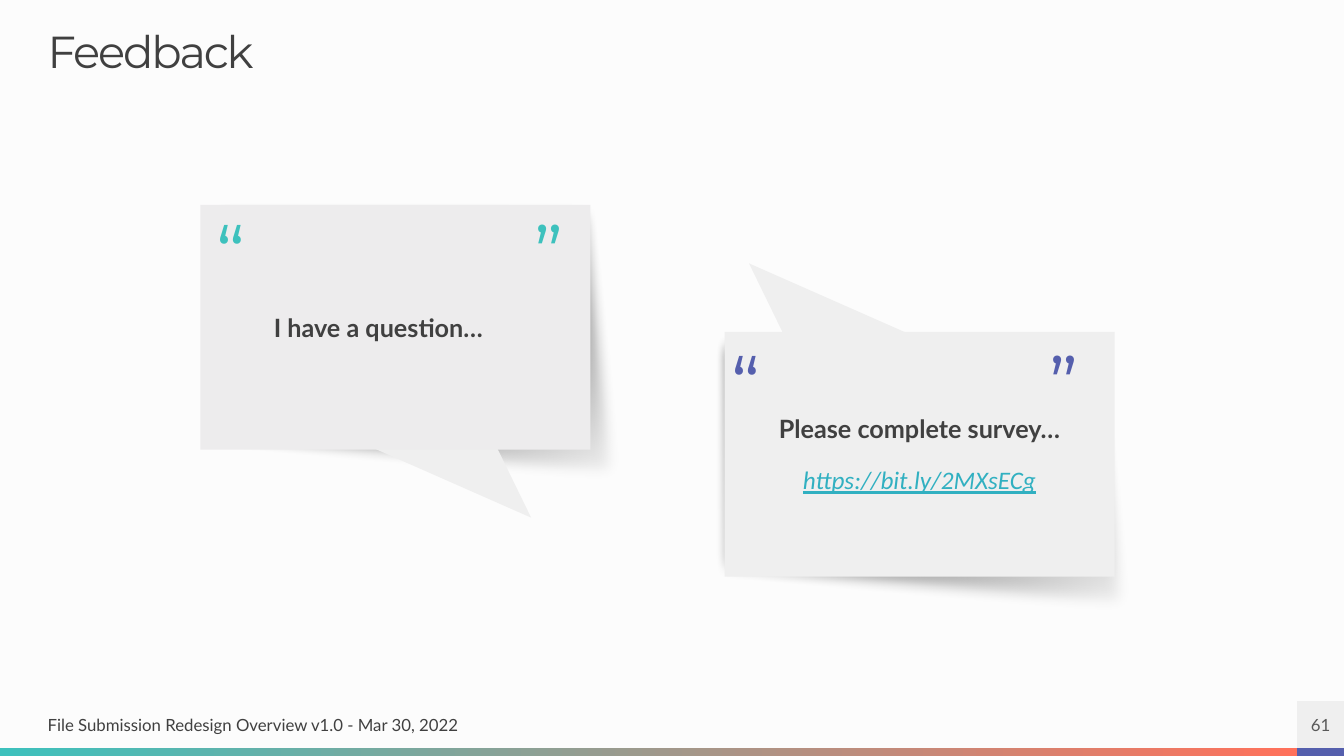
import pptx
import pptx.dml.color
import pptx.enum.shapes
import pptx.enum.text
import pptx.oxml.ns
import pptx.util
import lxml.etree

Cm = pptx.util.Cm
Pt = pptx.util.Pt
SHAPE = pptx.enum.shapes.MSO_SHAPE
ALIGN = pptx.enum.text.PP_ALIGN
ANCHOR = pptx.enum.text.MSO_ANCHOR
qn = pptx.oxml.ns.qn

TEAL, CORAL, INDIGO = "3DC1BD", "FF715B", "555FAD"
INK, GREY, PALE = "404040", "595959", "EFEFEF"
WIDTH, HEIGHT = 33.87, 19.05
CARD_W, CARD_H = 9.83, 6.17


def rgb(value):
    return pptx.dml.color.RGBColor.from_string(value)


def place(sp, x, y, w, h):
    sp.left, sp.top, sp.width, sp.height = Cm(x), Cm(y), Cm(w), Cm(h)


def set_frame(tf, anchor=ANCHOR.TOP, inset=0, left=None):
    tf.word_wrap = True
    tf.auto_size = pptx.enum.text.MSO_AUTO_SIZE.NONE
    tf.vertical_anchor = anchor
    tf.margin_top = tf.margin_right = tf.margin_bottom = Cm(inset)
    tf.margin_left = Cm(inset if left is None else left)


def write(p, text, size=18, font="Lato", color=INK, bold=False, italic=False,
          underline=False, align=ALIGN.LEFT, line=1.0, before=0, after=0, spacing=0):
    """Write one unbulleted paragraph; spacing is in points between letters."""
    pPr = p._p.get_or_add_pPr()
    pPr.set("marL", "0")
    pPr.set("indent", "0")
    lxml.etree.SubElement(pPr, qn("a:buNone"))
    p.alignment, p.line_spacing = align, line
    p.space_before, p.space_after = Pt(before), Pt(after)
    r = p.add_run()
    r.text = text
    f = r.font
    f.size, f.name, f.color.rgb = Pt(size), font, rgb(color)
    f.bold, f.italic, f.underline = bold, italic, underline
    if spacing:
        r._r.get_or_add_rPr().set("spc", str(int(spacing * 100)))


def add_text(s, x, y, w, h, text, anchor=ANCHOR.TOP, **style):
    sp = s.shapes.add_textbox(Cm(x), Cm(y), Cm(w), Cm(h))
    set_frame(sp.text_frame, anchor)
    write(sp.text_frame.paragraphs[0], text, **style)


def fill_gradient(sp, first, last, angle=0):
    sp.fill.gradient()
    sp.fill.gradient_angle = angle
    for stop, color in zip(sp.fill.gradient_stops, (first, last)):
        stop.color.rgb = rgb(color)


def add_preset(s, kind, x, y, w, h, color):
    sp = s.shapes.add_shape(kind, Cm(x), Cm(y), Cm(w), Cm(h))
    sp.shadow.inherit = False
    sp.line.fill.background()
    sp.fill.solid()
    sp.fill.fore_color.rgb = rgb(color)
    return sp


def add_soft_shadow(s, x, y):
    corners = [(9.84, 0), (10.62, 7.17), (0, CARD_H)]
    builder = s.shapes.build_freeform(Cm(x), Cm(y))
    builder.add_line_segments([(Cm(x + dx), Cm(y + dy)) for dx, dy in corners])
    sp = builder.convert_to_shape()
    sp.line.fill.background()
    fill_gradient(sp, "000000", "000000", 300)
    faded = list(sp._element.spPr.iter(qn("a:srgbClr")))[-1]
    lxml.etree.SubElement(faded, qn("a:alpha"), val="0")
    sp.shadow.inherit = False
    effects = sp._element.spPr.find(qn("a:effectLst"))
    lxml.etree.SubElement(effects, qn("a:softEdge"), rad=str(Cm(0.35)))


def add_tail(s, x, y, flip):
    sp = add_preset(s, SHAPE.ISOSCELES_TRIANGLE, x, y, 3.33, 4.55, PALE)
    sp.rotation = 133.9
    sp._element.spPr.find(qn("a:xfrm")).set(flip, "1")


def add_card(s, card, x, y, lines, color, accent, shadow, tail, flip, quote, left):
    """Build a speech card; shadow, tail and quote are offsets from its corner."""
    add_soft_shadow(s, x + shadow[0], y + shadow[1])
    add_tail(s, x + tail[0], y + tail[1], flip)
    s.shapes._spTree.append(card._element)  # bring the card above its tail
    place(card, x, y, CARD_W, CARD_H)
    card.fill.solid()
    card.fill.fore_color.rgb = rgb(color)
    tf = card.text_frame
    set_frame(tf, ANCHOR.MIDDLE, 0.5, left)
    for i, (text, style) in enumerate(lines):
        p = tf.add_paragraph() if i else tf.paragraphs[0]
        write(p, text, before=10 if i else 0, after=5, **style)
    for i, mark in enumerate("“”"):
        add_text(s, x + quote[0] + 8 * i, y + quote[1], 1.35, 1.2, mark, size=54,
                 font="Montserrat", color=accent, line=0.9, spacing=-1.5)


def add_title(s, x, y, w, h):
    title = s.shapes.title
    place(title, x, y, w, h)
    set_frame(title.text_frame)
    write(title.text_frame.paragraphs[0], "Feedback", size=32,
          font="Montserrat", line=0.9, spacing=-1.5)


def add_footer(s, y):
    number_w, bar_h = 1.18, 0.2
    split, bar_y = WIDTH - number_w, HEIGHT - bar_h
    bar = add_preset(s, SHAPE.RECTANGLE, 0, bar_y, split, bar_h, TEAL)
    fill_gradient(bar, TEAL, CORAL)
    add_preset(s, SHAPE.RECTANGLE, split, bar_y, number_w, bar_h, INDIGO)
    add_text(s, 1.2, y, 15.2, bar_y - y, "File Submission Redesign Overview v1.0 - Mar 30, 2022",
             ANCHOR.MIDDLE, size=12)
    number = add_preset(s, SHAPE.RECTANGLE, split, y, number_w, bar_y - y, PALE)
    set_frame(number.text_frame, ANCHOR.MIDDLE)
    write(number.text_frame.paragraphs[0], "61", size=12, color=GREY, align=ALIGN.CENTER)


def build_feedback_slide(prs):
    s = prs.slides.add_slide(prs.slide_layouts[3])
    s.background.fill.solid()
    s.background.fill.fore_color.rgb = rgb("FCFCFC")
    question, survey = s.placeholders[1], s.placeholders[2]
    add_title(s, 1.2, 0.76, 31.5, 1.2)
    add_footer(s, 17.67)
    add_card(s, question, 5.05, 5.16, [("I have a question…", dict(bold=True))],
             "EDECED", TEAL, shadow=(0.13, -0.05), tail=(5.03, 4.03), flip="flipH",
             quote=(0.41, 0.28), left=1.85)
    add_card(s, survey, 18.26, 8.36,
             [("Please complete survey…", dict(bold=True, align=ALIGN.CENTER)),
              ("https://bit.ly/2MXsECg", dict(font="Calibri", color="31B0C1", italic=True,
                                              underline=True, align=ALIGN.CENTER))],
             PALE, INDIGO, shadow=(-0.23, 0.05), tail=(0.59, -2.42), flip="flipV",
             quote=(0.18, 0.38), left=0.5)


def main():
    prs = pptx.Presentation()
    prs.slide_width, prs.slide_height = Cm(WIDTH), Cm(HEIGHT)
    build_feedback_slide(prs)
    prs.save("out.pptx")


if __name__ == "__main__":
    main()
